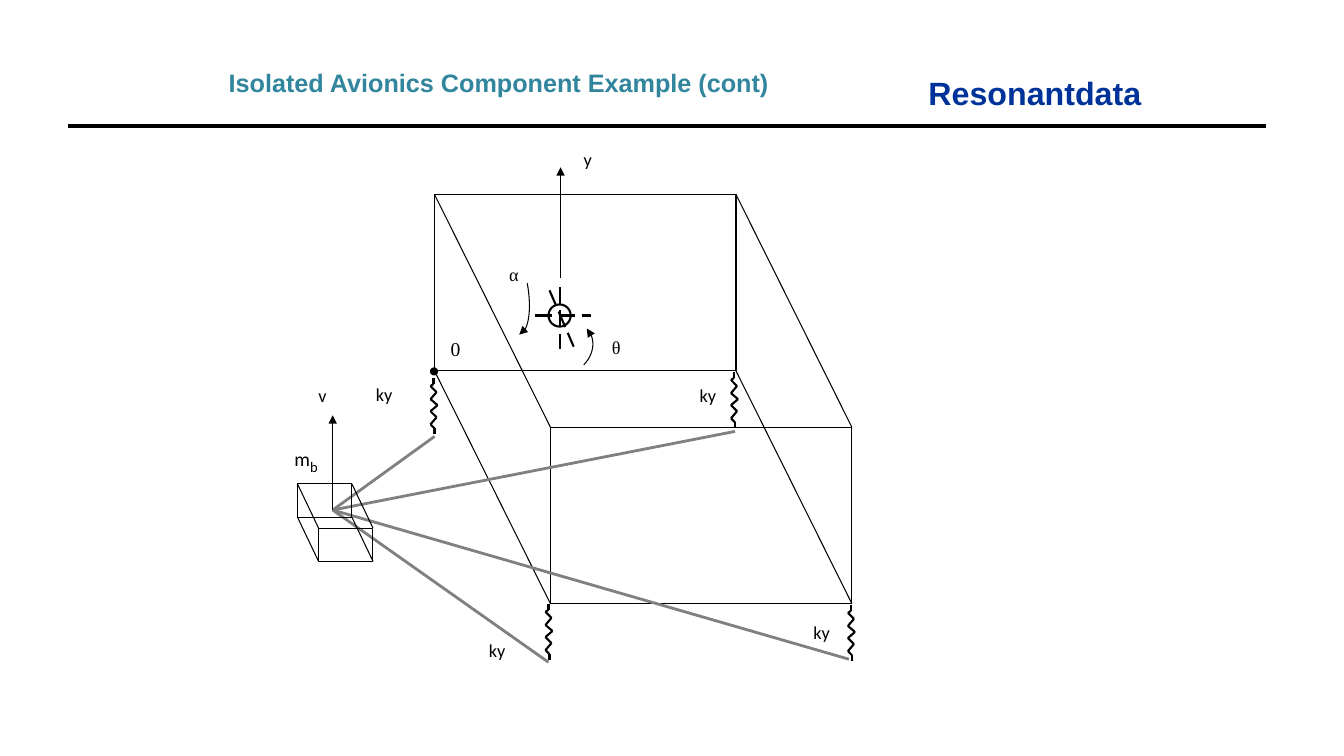
from itertools import product

from lxml.etree import SubElement
from pptx import Presentation
from pptx.dml.color import RGBColor
from pptx.enum.dml import MSO_LINE
from pptx.enum.shapes import MSO_CONNECTOR, MSO_SHAPE
from pptx.enum.text import MSO_ANCHOR, PP_ALIGN
from pptx.oxml.ns import qn
from pptx.util import Inches, Pt

BLACK = RGBColor(0x00, 0x00, 0x00)
WHITE = RGBColor(0xFF, 0xFF, 0xFF)
GRAY = RGBColor(0x80, 0x80, 0x80)
NAVY = RGBColor(0x00, 0x33, 0x99)
TEAL = RGBColor(0x31, 0x85, 0x9C)

SPRING_PROFILE = [(0, 0), (0, 0.06), (-0.03, 0.08), (0.03, 0.14), (-0.03, 0.21),
                  (0.04, 0.27), (-0.03, 0.33), (0.03, 0.39), (-0.03, 0.46),
                  (0.01, 0.5), (0.01, 0.56)]


def style_line(shape, width, color=BLACK, arrow=False, dash=None):
    line = shape.line
    line.color.rgb = color
    line.width = Pt(width)
    if dash:
        line.dash_style = dash
    if arrow:
        SubElement(line._get_or_add_ln(), qn("a:tailEnd"), type="triangle")


def add_line(slide, start, end, width=0.75, **style):
    points = [Inches(value) for value in (*start, *end)]
    connector = slide.shapes.add_connector(MSO_CONNECTOR.STRAIGHT, *points)
    style_line(connector, width, **style)
    SubElement(connector._element.spPr, qn("a:effectLst"))


def add_preset(slide, preset, box, fill=None, width=0.75):
    """Add a shape; a width of 0 leaves out its border."""
    shape = slide.shapes.add_shape(preset, *map(Inches, box))
    shape.shadow.inherit = False
    if fill is None:
        shape.fill.background()
    else:
        shape.fill.solid()
        shape.fill.fore_color.rgb = fill
    if width:
        style_line(shape, width)
    else:
        shape.line.fill.background()
    return shape


def write_text(shape, text, size, name="Calibri", color=BLACK, bold=False,
               align=PP_ALIGN.LEFT):
    frame = shape.text_frame
    frame.word_wrap = True
    frame.vertical_anchor = MSO_ANCHOR.TOP
    paragraph = frame.paragraphs[0]
    paragraph.alignment = align
    run = paragraph.add_run()
    run.text = text
    formats = {"size": Pt(size), "name": name, "bold": bold}
    for key, value in formats.items():
        setattr(run.font, key, value)
    run.font.color.rgb = color
    return paragraph


def add_header(slide, left, top, width):
    headings = [
        ((left + 8.44, top, 3.13, 0.91), "Resonantdata", 23, NAVY),
        ((left + 1.5, top - 0.06, 5.75, 0.4),
         "Isolated Avionics Component Example (cont)", 18, TEAL),
    ]
    for box, text, size, color in headings:
        textbox = slide.shapes.add_textbox(*map(Inches, box))
        write_text(textbox, text, size, "Arial", color, True)
    add_line(slide, (left, top + 0.57), (left + width, top + 0.57), 2.25)


def add_prism(slide, left, top, width, height, shift_x, shift_y):
    """Draw a wire box: back face, front face and the edges joining them."""
    for step in (0, 1):
        add_preset(slide, MSO_SHAPE.RECTANGLE,
                   (left + step * shift_x, top + step * shift_y, width, height))
    for x, y in product((left, left + width), (top, top + height)):
        add_line(slide, (x, y), (x + shift_x, y + shift_y))


def add_spring(slide, x, y):
    points = [(x + dx, y + dy) for dx, dy in SPRING_PROFILE]
    for start, end in zip(points, points[1:]):
        add_line(slide, start, end, 1.5)


def add_rotation_arrow(slide, *controls, steps=16):
    """Draw a cubic curve with an arrowhead at its end."""
    points = []
    for step in range(steps + 1):
        t = step / steps
        weights = ((1 - t) ** 3, 3 * t * (1 - t) ** 2, 3 * t ** 2 * (1 - t), t ** 3)
        points.append([Inches(sum(w * control[axis]
                                  for w, control in zip(weights, controls)))
                       for axis in (0, 1)])
    builder = slide.shapes.build_freeform(*points[0])
    builder.add_line_segments(points[1:], close=False)
    shape = builder.convert_to_shape()
    shape.shadow.inherit = False
    shape.fill.background()
    style_line(shape, 0.75, arrow=True)


def add_mass_center(slide, x, y):
    add_preset(slide, MSO_SHAPE.OVAL, (x - 0.11, y - 0.11, 0.22, 0.22), WHITE, 1.5)
    strokes = [((0, -0.28), (0, 0.33)), ((-0.24, 0), (0.31, 0)),
               ((-0.1, -0.25), (0.14, 0.31))]
    for (x1, y1), (x2, y2) in strokes:
        add_line(slide, (x + x1, y + y1), (x + x2, y + y2), 1.5,
                 dash=MSO_LINE.LONG_DASH)


def add_labels(slide):
    serif = "Times New Roman"
    labels = [
        ("ky", (7.97, 6.11, 0.54, 0.33), 13, "Calibri"),
        ("ky", (6.84, 3.76, 0.55, 0.37), 13, "Calibri"),
        ("ky", (4.75, 6.29, 0.54, 0.38), 13, "Calibri"),
        ("ky", (3.63, 3.75, 0.48, 0.31), 13, "Calibri"),
        ("v", (3.06, 3.76, 0.28, 0.31), 13, "Calibri"),
        ("y", (5.69, 1.42, 0.28, 0.31), 13, "Calibri"),
        ("0", (4.37, 3.29, 0.31, 0.32), 14, serif),
        ("α", (4.95, 2.56, 0.25, 0.28), 13, serif),
        ("θ", (5.97, 3.29, 0.25, 0.28), 13, serif),
    ]
    for text, box, size, name in labels:
        label = add_preset(slide, MSO_SHAPE.RECTANGLE, box, WHITE, 0)
        write_text(label, text, size, name)

    mass = add_preset(slide, MSO_SHAPE.RECTANGLE, (2.67, 4.33, 0.58, 0.41), WHITE, 0)
    paragraph = write_text(mass, "m", 14, align=PP_ALIGN.RIGHT)
    subscript = paragraph.add_run()
    subscript.text = "b"
    subscript.font.size = Pt(18)
    subscript.font.name = "Calibri"
    subscript.font.color.rgb = BLACK
    subscript._r.get_or_add_rPr().set("baseline", "-25000")


def add_isolated_component(slide):
    add_labels(slide)
    add_prism(slide, 4.31, 1.93, 2.99, 1.75, 1.15, 2.31)
    add_mass_center(slide, 5.55, 3.13)
    add_preset(slide, MSO_SHAPE.OVAL, (4.27, 3.65, 0.07, 0.07), BLACK)

    base = (3.3, 5.06)
    for foot in ((4.31, 4.33), (7.29, 4.28), (8.42, 6.54), (5.44, 6.57)):
        add_line(slide, foot, base, 2, color=GRAY)
    add_prism(slide, 2.95, 4.8, 0.54, 0.33, 0.21, 0.44)
    for start, end in ((base, (3.3, 4.12)), ((5.56, 2.76), (5.56, 1.66))):
        add_line(slide, start, end, arrow=True)

    add_rotation_arrow(slide, (5.23, 2.81), (5.28, 3.08), (5.24, 3.3), (5.15, 3.32))
    add_rotation_arrow(slide, (5.79, 3.62), (5.9, 3.51), (5.91, 3.35), (5.82, 3.26))
    for x, y in ((8.44, 6), (5.44, 5.99), (4.3, 3.75), (7.28, 3.69)):
        add_spring(slide, x, y)


def main():
    presentation = Presentation()
    presentation.slide_width = Inches(13.33)
    presentation.slide_height = Inches(7.5)
    slide = presentation.slides.add_slide(presentation.slide_layouts[6])
    add_header(slide, 0.67, 0.68, 11.89)
    add_isolated_component(slide)
    presentation.save("out.pptx")


if __name__ == "__main__":
    main()
